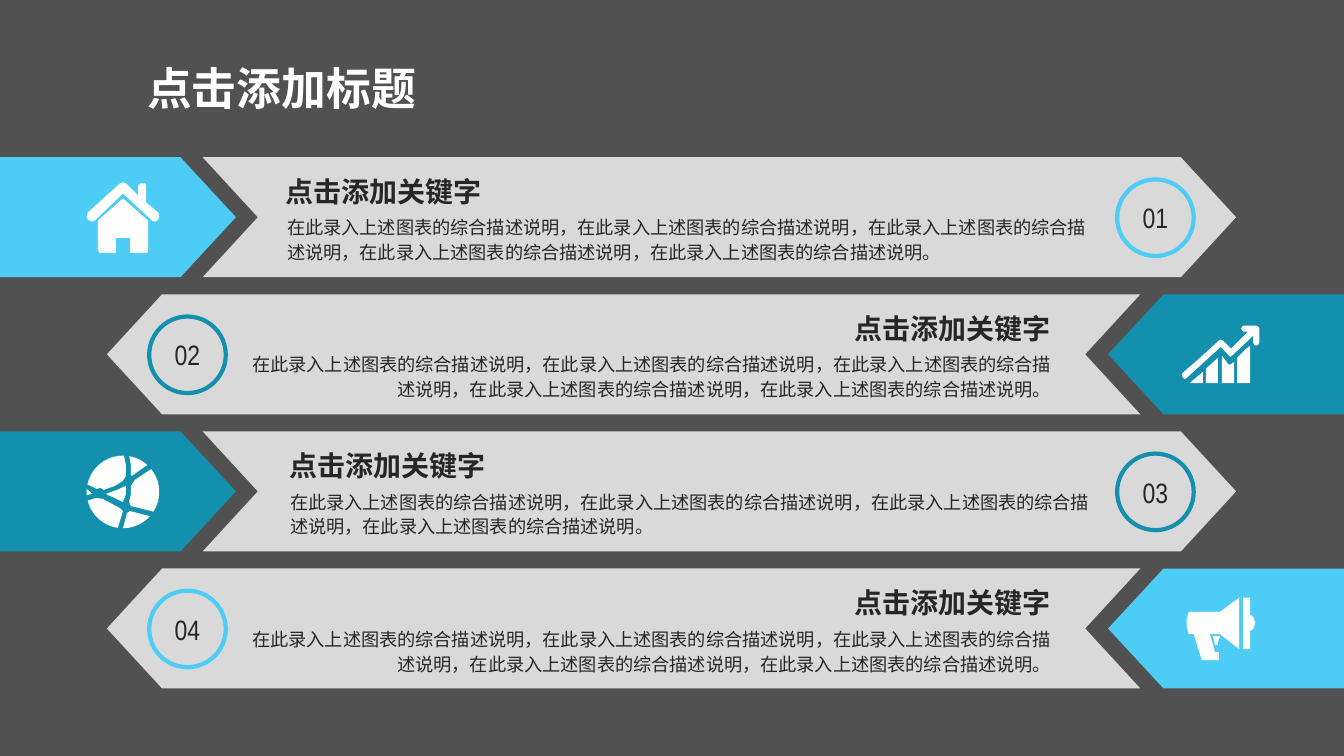
from math import cos, radians, sin

from lxml.etree import SubElement
from pptx import Presentation
from pptx.dml.color import RGBColor
from pptx.enum.shapes import MSO_SHAPE as Shape
from pptx.enum.text import MSO_ANCHOR as Anchor, MSO_AUTO_SIZE as Fit, PP_ALIGN as Align
from pptx.oxml.ns import qn
from pptx.util import Inches, Pt

SKY, TEAL, GREY, INK, WHITE = "4DCDF5", "1390AD", "D9D9D9", "262626", "FFFFFF"
CJK = "Noto Sans CJK SC"
WIDE, TOP, STEP, HIGH = 13.33, 1.56, 1.36, 1.19


def paint(shape, fill, line=None):
    shape.shadow.inherit = False
    shape.fill.solid()
    shape.fill.fore_color.rgb = RGBColor.from_string(fill)
    if line:
        shape.line.color.rgb = RGBColor.from_string(line)
        shape.line.width = Pt(3)
    else:
        shape.line.fill.background()


def write(shape, text, color, align, form, gap=None):
    """Put one styled paragraph in the shape."""
    para = shape.text_frame.paragraphs[0]
    para.alignment = align
    if gap:
        para.line_spacing = gap
    run = para.add_run()
    run.text = text
    for key, value in form.items():
        setattr(run.font, key, value)
    run.font.color.rgb = RGBColor.from_string(color)
    SubElement(run.font._element, qn("a:ea"), typeface=CJK)


house = [
    [(1.22, 1.97), (1.47, 2.19), (1.47, 2.48), (1.46, 2.51), (1.29, 2.51), (1.29, 2.36),
     (1.15, 2.36), (1.15, 2.51), (0.99, 2.51), (0.97, 2.48), (0.97, 2.19)],
    [(1.22, 1.81), (1.25, 1.82), (1.37, 1.94), (1.37, 1.84), (1.39, 1.82), (1.44, 1.82),
     (1.45, 1.84), (1.45, 2.01), (1.57, 2.11), (1.58, 2.15), (1.57, 2.18), (1.54, 2.2),
     (1.51, 2.19), (1.22, 1.92), (0.94, 2.19), (0.91, 2.2), (0.87, 2.18), (0.86, 2.15),
     (0.87, 2.11), (1.19, 1.82)],
]
chart = [
    [(11.93, 3.69), (11.93, 3.8), (11.8, 3.8), (11.92, 3.7)],
    [(12.08, 3.55), (12.08, 3.8), (11.96, 3.8), (11.96, 3.66)],
    [(12.12, 3.53), (12.18, 3.61), (12.2, 3.62), (12.24, 3.59), (12.24, 3.8), (12.12, 3.8)],
    [(12.4, 3.43), (12.4, 3.8), (12.27, 3.8), (12.27, 3.55), (12.35, 3.47)],
    [(12.34, 3.23), (12.46, 3.23), (12.48, 3.24), (12.49, 3.26), (12.49, 3.4), (12.48, 3.42),
     (12.46, 3.43), (12.44, 3.42), (12.43, 3.4), (12.43, 3.33), (12.23, 3.52), (12.2, 3.54),
     (12.18, 3.52), (12.11, 3.44), (12.01, 3.53), (11.77, 3.75), (11.75, 3.76), (11.73, 3.74),
     (11.72, 3.72), (11.73, 3.7), (11.88, 3.57), (12.1, 3.37), (12.13, 3.38), (12.21, 3.46),
     (12.38, 3.29), (12.33, 3.29), (12.31, 3.26), (12.32, 3.24)],
]
horn = [
    [(11.79, 6.07), (12.1, 6.07), (12.29, 5.93), (12.29, 6.44), (12.1, 6.29), (12, 6.29),
     (12.05, 6.47), (12.09, 6.47), (12.09, 6.55), (11.92, 6.55), (11.84, 6.29), (11.79, 6.29),
     (11.77, 6.21), (11.77, 6.14)],
    [(12.4, 6.1), (12.43, 6.12), (12.45, 6.18), (12.43, 6.24), (12.4, 6.26), (12.4, 6.44),
     (12.33, 6.44), (12.33, 5.93), (12.4, 5.93)],
    [(12.1, 6.31), (12.03, 6.31), (12.05, 6.4), (12.08, 6.4), (12.08, 6.37)],
]
# Each globe piece: start and end angle on the rim, then its inner corners.
rims = [
    (192, 270, [(1.23, 4.52), (1.25, 4.62), (1.25, 4.72), (1.22, 4.77), (1.14, 4.82),
                (1.03, 4.86), (1, 4.84), (0.96, 4.85)]),
    (280, 312, [(1.31, 4.72), (1.3, 4.71), (1.3, 4.62)]),
    (-39, 33, [(1.3, 5.02), (1.28, 4.98), (1.3, 4.9), (1.3, 4.82), (1.34, 4.76)]),
    (42, 90, [(1.26, 5.09), (1.29, 5.07)]),
    (98, 166, [(0.95, 4.94), (1.02, 4.95), (1.19, 5.04), (1.22, 5.07)]),
]
globe = [
    [(0.86, 4.91), (0.92, 4.9), (0.86, 4.85)],
    [(1.25, 4.82), (1.16, 4.86), (1.05, 4.9), (1.22, 4.98), (1.25, 4.9)],
]
for start, end, inner in rims:
    turns = [radians(start + (end - start) * k / 10) for k in range(11)]
    globe.append([(1.22 + 0.36 * cos(t), 4.88 + 0.36 * sin(t)) for t in turns] + inner)

deck = Presentation()
deck.slide_width, deck.slide_height = Inches(WIDE), Inches(7.5)
slide = deck.slides.add_slide(deck.slide_layouts[6])
slide.background.fill.solid()
slide.background.fill.fore_color.rgb = RGBColor.from_string("515151")
shapes = slide.shapes

num_form = {"size": Pt(20), "name": "Arial Narrow"}
key_form = {"size": Pt(20), "name": CJK, "bold": True}
body_form = {"size": Pt(13), "name": CJK}
phrase = "在此录入上述图表的综合描述说明"

# Colour, icon, left of the heading, left of the body, phrases in the body
rows = [
    (SKY, house, 2.73, 2.75, 5),
    (TEAL, chart, 7.9, 2.26, 5),
    (TEAL, globe, 2.77, 2.78, 4),
    (SKY, horn, 7.9, 2.26, 5),
]
for i, (color, icon, key_x, body_x, count) in enumerate(rows):
    y = TOP + STEP * i
    flip = i % 2 == 1
    side = Align.RIGHT if flip else Align.LEFT

    arrow = shapes.add_shape(Shape.NOTCHED_RIGHT_ARROW, Inches(1.06 if flip else 2.01),
                             Inches(y), Inches(10.25), Inches(HIGH))
    arrow.adjustments[0], arrow.adjustments[1] = 1, 0.46
    arrow.rotation = 180 if flip else 0
    paint(arrow, GREY)

    ring = shapes.add_shape(Shape.OVAL, Inches(1.48 if flip else 11.08), Inches(y + 0.22),
                            Inches(0.76), Inches(0.76))
    paint(ring, GREY, color)
    ring.text_frame.vertical_anchor = Anchor.MIDDLE
    write(ring, f"{i + 1:02}", INK, Align.CENTER, num_form)

    head = shapes.add_textbox(Inches(key_x), Inches(y + 0.12), Inches(2.62), Inches(0.44))
    write(head, "点击添加关键字", INK, side, key_form)
    body = shapes.add_textbox(Inches(body_x), Inches(y + 0.51), Inches(8.26), Inches(0.6))
    write(body, "，".join([phrase] * count) + "。", INK, side, body_form, 1.14)
    for box in (head, body):
        box.text_frame.word_wrap = True
        box.text_frame.auto_size = Fit.SHAPE_TO_FIT_TEXT

    tab = [(0, y), (1.79, y), (2.34, y + HIGH / 2), (1.79, y + HIGH), (0, y + HIGH)]
    if flip:
        tab = [(WIDE - px, py) for px, py in tab]
    for loops, fill in (([tab], color), (icon, WHITE)):
        pen = None
        for loop in loops:
            first, *rest = [(Inches(px), Inches(py)) for px, py in loop]
            if pen:
                pen.move_to(*first)
            else:
                pen = shapes.build_freeform(*first)
            pen.add_line_segments(rest, close=True)
        paint(pen.convert_to_shape(), fill)

title = shapes.add_textbox(Inches(1.36), Inches(0.55), Inches(2.89), Inches(0.64))
title.text_frame.word_wrap = False
title.text_frame.auto_size = Fit.SHAPE_TO_FIT_TEXT
write(title, "点击添加标题", WHITE, Align.LEFT, {"size": Pt(32), "name": "Arial", "bold": True})

deck.save("out.pptx")
